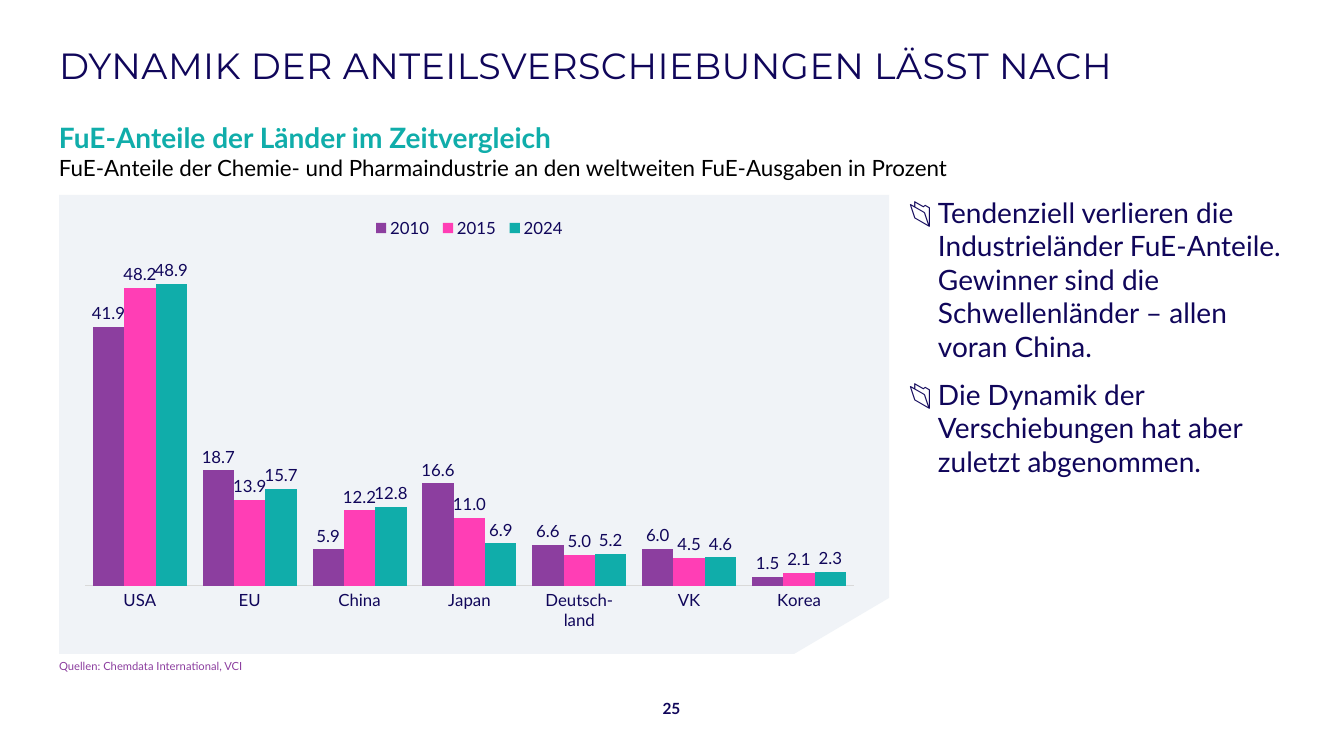
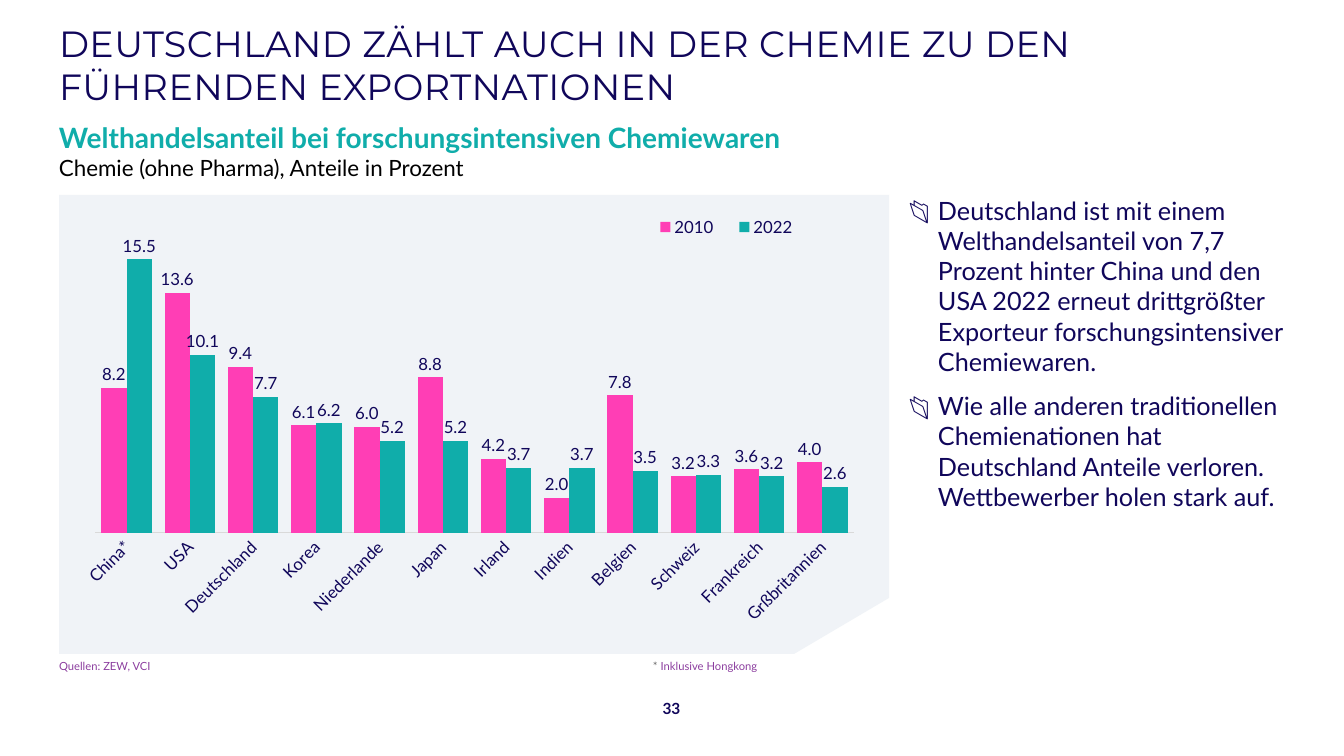
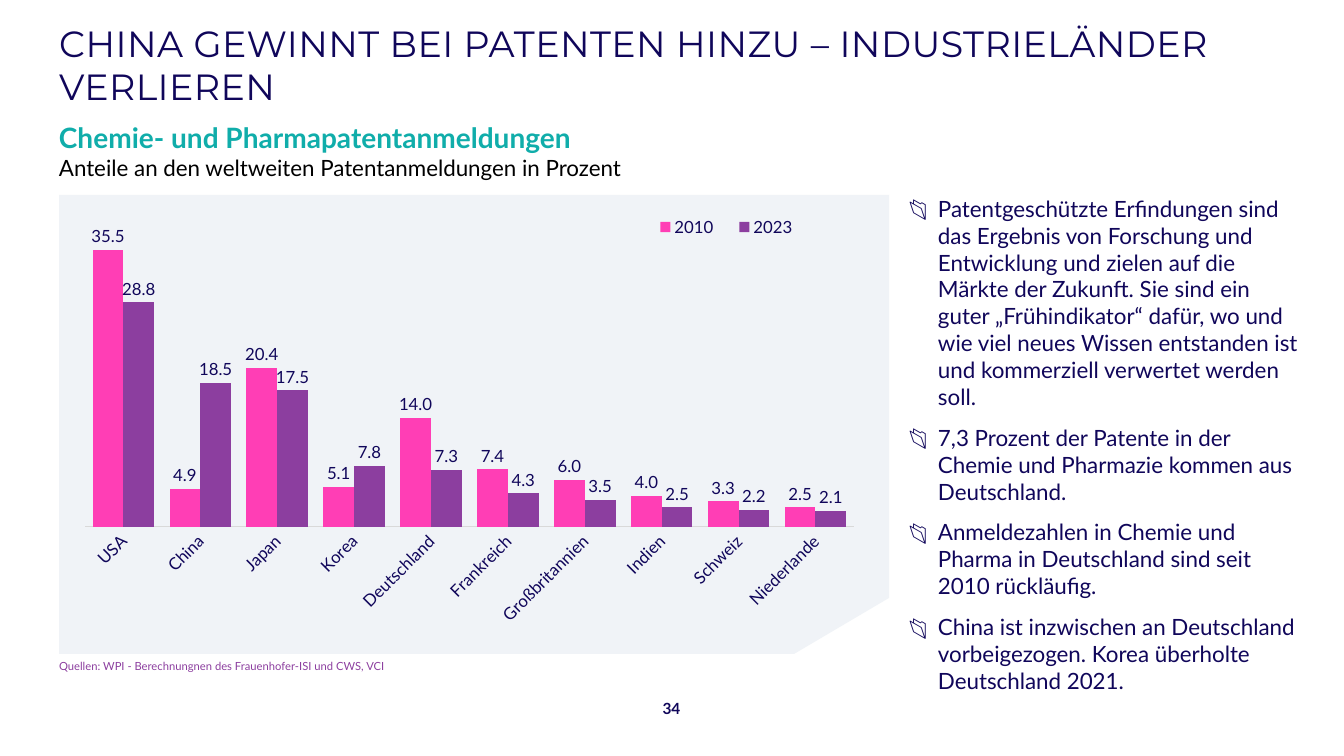
"""Build three slides on research, export and patent shares of the chemical industry."""
from lxml import etree
from pptx import Presentation
from pptx.chart.data import CategoryChartData
from pptx.dml.color import RGBColor
from pptx.enum.chart import XL_CHART_TYPE, XL_LABEL_POSITION, XL_LEGEND_POSITION, XL_TICK_MARK
from pptx.enum.text import MSO_ANCHOR, MSO_AUTO_SIZE, PP_ALIGN
from pptx.oxml import parse_xml
from pptx.oxml.ns import nsdecls, qn
from pptx.util import Emu, Pt

NAVY, TEAL, PINK, PURPLE = "10065A", "10ADAA", "FF3EB5", "8C3E9F"
BLACK, GREY, AXIS_GREY, PANEL = "000000", "666666", "D9D9D9", "F0F3F7"
BODY_FONT, TITLE_FONT = "Lato", "Montserrat"
CHART_BOX = (69, 207, 801, 432)
PLOT_TOP, PLOT_RIGHT = 215, 854
INDENT = 29


def px(*lengths):
    """Turn pixel lengths into EMU."""
    return [Emu(round(length * 914400 / 100.8)) for length in lengths]


def write(shape, *paragraphs, box, size, color=NAVY, font=BODY_FONT, bold=False, spacing=0,
          align=PP_ALIGN.LEFT, anchor=MSO_ANCHOR.TOP, inset=0, bullet="", mark=""):
    """Place a shape and fill it with formatted paragraphs."""
    shape.left, shape.top, shape.width, shape.height = px(*box)
    frame = shape.text_frame
    frame.word_wrap, frame.auto_size, frame.vertical_anchor = True, MSO_AUTO_SIZE.NONE, anchor
    frame.margin_left = frame.margin_right = 0
    frame.margin_top, frame.margin_bottom = px(inset, inset)
    for number, content in enumerate(paragraphs):
        paragraph = frame.add_paragraph() if number else frame.paragraphs[0]
        paragraph.alignment = align
        paragraph.space_before = Pt(10 if number else 0)
        if bullet:
            properties = paragraph._p.get_or_add_pPr()
            hang = px(INDENT)[0]
            properties.set("marL", str(hang))
            properties.set("indent", str(-hang))
            properties.append(parse_xml(
                f'<a:buClr {nsdecls("a")}><a:srgbClr val="{color}"/></a:buClr>'))
            properties.append(parse_xml(f'<a:buFont {nsdecls("a")} typeface="{font}"/>'))
            properties.append(parse_xml(f'<a:buChar {nsdecls("a")} char="{bullet}"/>'))
        for words, shade in ((mark, GREY), (content, color)):
            if words:
                run = paragraph.add_run()
                run.text = words
                run.font.size, run.font.name, run.font.bold = Pt(size), font, bold
                run.font.color.rgb = RGBColor.from_string(shade)
                if spacing:
                    run._r.get_or_add_rPr().set("spc", str(spacing))


topics = [
    dict(
        page="25",
        title="DYNAMIK DER ANTEILSVERSCHIEBUNGEN LÄSST NACH",
        heading="FuE-Anteile der Länder im Zeitvergleich",
        subheading="FuE-Anteile der Chemie- und Pharmaindustrie an den weltweiten FuE-Ausgaben in Prozent",
        source="Quellen: Chemdata International, VCI",
        footnote="",
        messages=[
            "Tendenziell verlieren die Industrieländer FuE-Anteile. Gewinner sind die "
            "Schwellenländer – allen voran China.",
            "Die Dynamik der Verschiebungen hat aber zuletzt abgenommen.",
        ],
        message_size=20, message_width=381,
        countries=["USA", "EU", "China", "Japan", "Deutsch-\nland", "VK", "Korea"],
        shares=[
            ("2010", PURPLE, [41.9, 18.7, 5.9, 16.6, 6.6, 6, 1.5]),
            ("2015", PINK, [48.2, 13.9, 12.2, 11, 5, 4.5, 2.1]),
            ("2024", TEAL, [48.9, 15.7, 12.8, 6.9, 5.2, 4.6, 2.3]),
        ],
        maximum=60, plot_left=85, baseline=586, tilt=0, legend_box=(368, 215, 203, 26),
    ),
    dict(
        page="33",
        title="DEUTSCHLAND ZÄHLT AUCH IN DER CHEMIE ZU DEN FÜHRENDEN EXPORTNATIONEN",
        heading="Welthandelsanteil bei forschungsintensiven Chemiewaren",
        subheading="Chemie (ohne Pharma), Anteile in Prozent",
        source="Quellen: ZEW, VCI",
        footnote="Inklusive Hongkong",
        messages=[
            "Deutschland ist mit einem Welthandelsanteil von 7,7 Prozent hinter China und den "
            "USA 2022 erneut drittgrößter Exporteur forschungsintensiver Chemiewaren.",
            "Wie alle anderen traditionellen Chemienationen hat Deutschland Anteile verloren. "
            "Wettbewerber holen stark auf.",
        ],
        message_size=18, message_width=381,
        countries=["China*", "USA", "Deutschland", "Korea", "Niederlande", "Japan", "Irland",
                   "Indien", "Belgien", "Schweiz", "Frankreich", "Grßbritannien"],
        shares=[
            ("2010", PINK, [8.2, 13.6, 9.4, 6.1, 6, 8.8, 4.2, 2, 7.8, 3.2, 3.6, 4]),
            ("2022", TEAL, [15.5, 10.1, 7.7, 6.2, 5.2, 5.2, 3.7, 3.7, 3.5, 3.3, 3.2, 2.6]),
        ],
        maximum=18, plot_left=95, baseline=533, tilt=-45, legend_box=(640, 214, 173, 26),
    ),
    dict(
        page="34",
        title="CHINA GEWINNT BEI PATENTEN HINZU – INDUSTRIELÄNDER VERLIEREN",
        heading="Chemie- und Pharmapatentanmeldungen",
        subheading="Anteile an den weltweiten Patentanmeldungen in Prozent",
        source="Quellen: WPI - Berechnungnen des Frauenhofer-ISI und CWS, VCI",
        footnote="",
        messages=[
            "Patentgeschützte Erfindungen sind das Ergebnis von Forschung und Entwicklung und "
            "zielen auf die Märkte der Zukunft. Sie sind ein guter „Frühindikator“ dafür, wo und "
            "wie viel neues Wissen entstanden ist und kommerziell verwertet werden soll.",
            "7,3 Prozent der Patente in der Chemie und Pharmazie kommen aus Deutschland.",
            "Anmeldezahlen in Chemie und Pharma in Deutschland sind seit 2010 rückläufig.",
            "China ist inzwischen an Deutschland vorbeigezogen. Korea überholte Deutschland 2021.",
        ],
        message_size=16, message_width=395,
        countries=["USA", "China", "Japan", "Korea", "Deutschland", "Frankreich",
                   "Großbritannien", "Indien", "Schweiz", "Niederlande"],
        shares=[
            ("2010", PINK, [35.5, 4.9, 20.4, 5.1, 14, 7.4, 6, 4, 3.3, 2.5]),
            ("2023", PURPLE, [28.8, 18.5, 17.5, 7.8, 7.3, 4.3, 3.5, 2.5, 2.2, 2.1]),
        ],
        maximum=40, plot_left=85, baseline=527, tilt=-45, legend_box=(640, 214, 173, 26),
    ),
]

deck = Presentation()
deck.slide_width, deck.slide_height = px(1344, 756)

for topic in topics:
    slide = deck.slides.add_slide(deck.slide_layouts[5])
    shapes = slide.shapes

    outline = [tuple(px(*corner)) for corner in
               ((59, 195), (889, 195), (889, 598), (794, 654), (59, 654))]
    builder = shapes.build_freeform(*outline[0], scale=1.0)
    builder.add_line_segments(outline[1:], close=True)
    panel = builder.convert_to_shape()
    panel.shadow.inherit = False
    panel.fill.solid()
    panel.fill.fore_color.rgb = RGBColor.from_string(PANEL)
    panel.line.fill.background()

    write(shapes.title, topic["title"], box=(59, 15, 1230, 99), size=26, font=TITLE_FONT,
          spacing=30, anchor=MSO_ANCHOR.MIDDLE, inset=4)
    write(shapes.add_textbox(0, 0, 0, 0), topic["heading"], box=(59, 120, 1230, 31), size=20,
          color=TEAL, bold=True)
    write(shapes.add_textbox(0, 0, 0, 0), topic["subheading"], box=(59, 154, 1230, 28), size=16,
          color=BLACK)
    write(shapes.add_textbox(0, 0, 0, 0), *topic["messages"],
          box=(909, 195, topic["message_width"], 445), size=topic["message_size"], bullet="📂")
    write(shapes.add_textbox(0, 0, 0, 0), topic["source"], box=(59, 659, 580, 14), size=8,
          color=PURPLE)
    if topic["footnote"]:
        write(shapes.add_textbox(0, 0, 0, 0), topic["footnote"], box=(653, 659, 199, 14), size=8,
              color=PURPLE, mark="* ")
    write(shapes.add_textbox(0, 0, 0, 0), topic["page"], box=(642, 694, 59, 28), size=11,
          bold=True, align=PP_ALIGN.CENTER, anchor=MSO_ANCHOR.MIDDLE)

    share_data = CategoryChartData(number_format="0.0")
    share_data.categories = topic["countries"]
    for year, _, values in topic["shares"]:
        share_data.add_series(year, values)
    chart = shapes.add_chart(XL_CHART_TYPE.COLUMN_CLUSTERED, *px(*CHART_BOX), share_data).chart
    chart.has_title = False
    chart.font.size, chart.font.name = Pt(12), BODY_FONT
    chart.font.color.rgb = RGBColor.from_string(NAVY)
    chart.has_legend = True
    chart.legend.position = XL_LEGEND_POSITION.TOP
    chart.legend.include_in_layout = True

    share_axis = chart.value_axis
    share_axis.minimum_scale, share_axis.maximum_scale = 0, topic["maximum"]
    share_axis.has_major_gridlines = False
    share_axis.visible = False
    country_axis = chart.category_axis
    country_axis.major_tick_mark = XL_TICK_MARK.NONE
    country_axis.format.line.color.rgb = RGBColor.from_string(AXIS_GREY)
    country_axis.format.line.width = Pt(0.75)
    country_axis.tick_labels.font.size = Pt(12)
    country_axis.tick_labels.font.name = BODY_FONT
    country_axis.tick_labels.font.color.rgb = RGBColor.from_string(NAVY)

    columns = chart.plots[0]
    columns.gap_width, columns.overlap, columns.vary_by_categories = 50, 0, False
    for series, (_, color, _) in zip(columns.series, topic["shares"]):
        series.invert_if_negative = False
        series.format.fill.solid()
        series.format.fill.fore_color.rgb = RGBColor.from_string(color)
        labels = series.data_labels
        labels.show_value = True
        labels.position = XL_LABEL_POSITION.OUTSIDE_END
        labels.number_format, labels.number_format_is_linked = "0.0", False
        labels.font.size, labels.font.name = Pt(12), BODY_FONT
        labels.font.color.rgb = RGBColor.from_string(NAVY)

    chart_space = chart._chartSpace
    chart_space.find(f'.//{qn("c:catAx")}/{qn("c:txPr")}/{qn("a:bodyPr")}').set(
        "rot", str(topic["tilt"] * 60000))
    plot_box = (topic["plot_left"], PLOT_TOP, PLOT_RIGHT - topic["plot_left"],
                topic["baseline"] - PLOT_TOP)
    chart_left, chart_top, chart_width, chart_height = CHART_BOX
    for area_tag, position, (left, top, width, height) in (
            ("c:plotArea", 0, plot_box), ("c:legend", 1, topic["legend_box"])):
        area = chart_space.find(f".//{qn(area_tag)}")
        for old_layout in area.findall(qn("c:layout")):
            area.remove(old_layout)
        layout = parse_xml(f'<c:layout {nsdecls("c")}><c:manualLayout/></c:layout>')
        settings = {"xMode": "edge", "yMode": "edge",
                    "x": (left - chart_left) / chart_width, "y": (top - chart_top) / chart_height,
                    "w": width / chart_width, "h": height / chart_height}
        if area_tag == "c:plotArea":
            settings = {"layoutTarget": "inner", **settings}
        for setting, value in settings.items():
            etree.SubElement(layout[0], qn(f"c:{setting}")).set("val", str(value))
        area.insert(position, layout)

deck.save("out.pptx")
